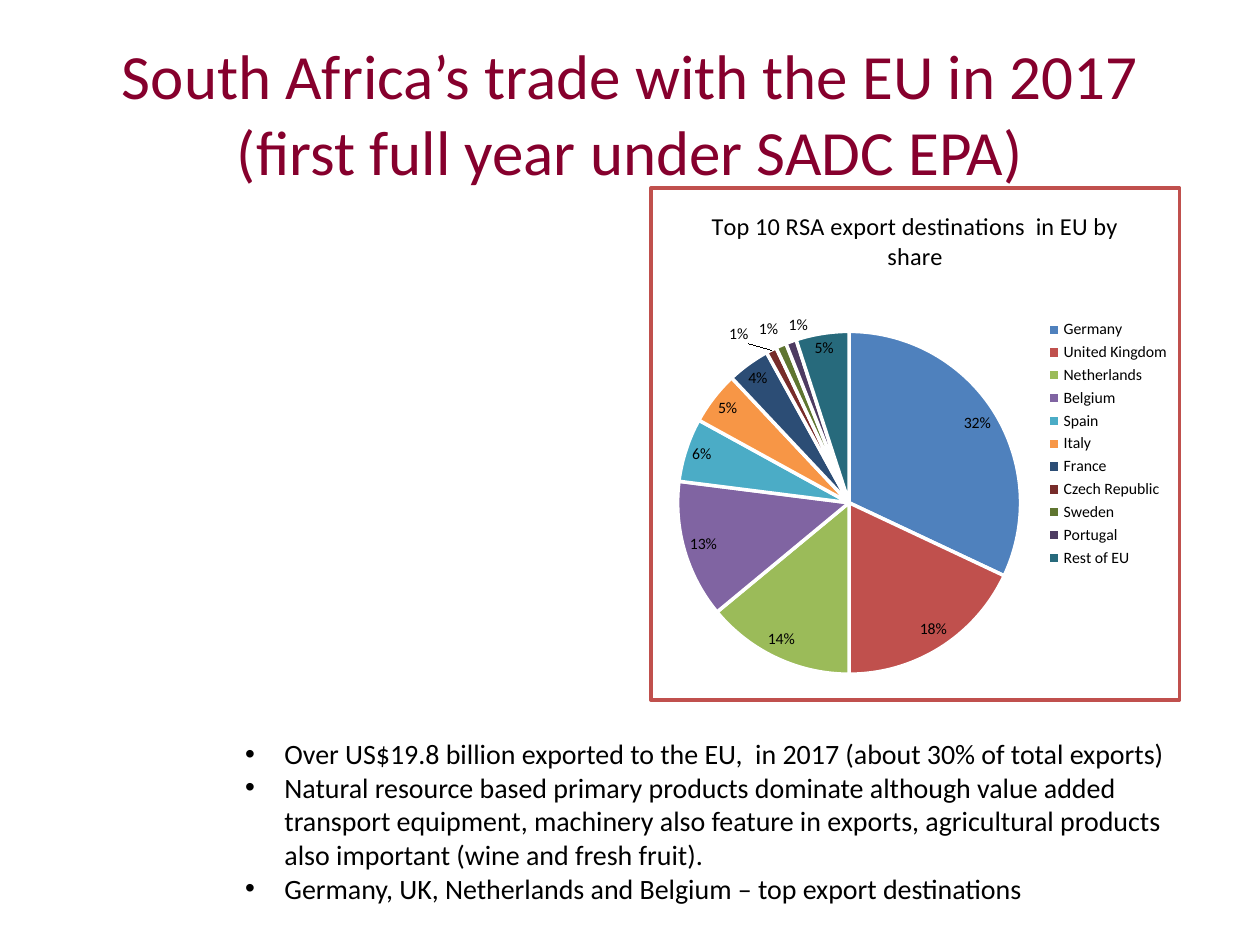
"""Build a slide on South Africa's exports to the EU in 2017."""
from dataclasses import dataclass

from lxml import etree
from pptx import Presentation
from pptx.chart.data import CategoryChartData
from pptx.dml.color import RGBColor
from pptx.enum.chart import XL_CHART_TYPE, XL_LABEL_POSITION, XL_LEGEND_POSITION
from pptx.enum.text import MSO_ANCHOR, PP_ALIGN
from pptx.oxml import parse_xml
from pptx.oxml.ns import nsdecls, qn
from pptx.util import Pt

PIE = XL_CHART_TYPE.PIE
BEST_FIT = XL_LABEL_POSITION.BEST_FIT
LEGEND_RIGHT = XL_LEGEND_POSITION.RIGHT
MIDDLE = MSO_ANCHOR.MIDDLE
CENTER = PP_ALIGN.CENTER
BLANK_LAYOUT = 6

HEADING = "South Africa’s trade with the EU in 2017 (first full year under SADC EPA)"
CHART_TITLE = "Top 10 RSA export destinations  in EU by share"
FINDINGS = (
    "Over US$19.8 billion exported to the EU,  in 2017 (about 30% of total exports)",
    "Natural resource based primary products dominate although value added "
    "transport equipment, machinery also feature in exports, agricultural "
    "products also important (wine and fresh fruit).",
    "Germany, UK, Netherlands and Belgium – top export destinations",
)
EXPORT_SHARES = (
    ("Germany", 32, "4F81BD"),
    ("United Kingdom", 18, "C0504D"),
    ("Netherlands", 14, "9BBB59"),
    ("Belgium", 13, "8064A2"),
    ("Spain", 6, "4BACC6"),
    ("Italy", 5, "F79646"),
    ("France", 4, "2C4D75"),
    ("Czech Republic", 1, "772C2A"),
    ("Sweden", 1, "5F7530"),
    ("Portugal", 1, "4D3B62"),
    ("Rest of EU", 5, "276A7C"),
)


@dataclass(frozen=True)
class Theme:
    """Colours, font and type sizes of the slide."""

    font: str = "Calibri"
    heading: str = "86002D"
    ink: str = "000000"
    paper: str = "FFFFFF"
    border: str = "C0504D"
    heading_size: int = 36
    body_size: int = 16
    chart_title_size: int = 14
    chart_size: int = 10
    label_size: int = 9
    border_width: int = 2


class SlideBuilder:
    """Place styled elements on the current slide."""

    def __init__(self, slide, theme):
        self.slide = slide
        self.theme = theme

    def style(self, font, size, color):
        """Set the typeface, size and colour of a font."""
        font.name = self.theme.font
        font.size = Pt(size)
        font.bold = False
        font.color.rgb = RGBColor.from_string(color)

    def text_frame(self, box):
        """Add a wrapping text box and return its frame."""
        frame = self.slide.shapes.add_textbox(*map(Pt, box)).text_frame
        frame.word_wrap = True
        return frame

    def heading(self, text, box):
        """Add the centred slide heading."""
        frame = self.text_frame(box)
        frame.vertical_anchor = MIDDLE
        paragraph = frame.paragraphs[0]
        paragraph.alignment = CENTER
        run = paragraph.add_run()
        run.text = text
        self.style(run.font, self.theme.heading_size, self.theme.heading)

    def bullets(self, items, box, indent):
        """Add a bulleted list with a hanging indent."""
        frame = self.text_frame(box)
        for index, item in enumerate(items):
            paragraph = frame.add_paragraph() if index else frame.paragraphs[0]
            properties = paragraph._p.get_or_add_pPr()
            properties.set("marL", str(Pt(indent)))
            properties.set("indent", str(-Pt(indent)))
            etree.SubElement(properties, qn("a:buFont")).set("typeface", "Arial")
            etree.SubElement(properties, qn("a:buChar")).set("char", "•")
            run = paragraph.add_run()
            run.text = item
            self.style(run.font, self.theme.body_size, self.theme.ink)

    def layout(self, parent, position, **fractions):
        """Fix a chart part at fractions of the chart area."""
        for stale in parent.findall(qn("c:layout")):
            parent.remove(stale)
        layout = etree.Element(qn("c:layout"))
        manual = etree.SubElement(layout, qn("c:manualLayout"))
        if parent.tag == qn("c:plotArea"):
            etree.SubElement(manual, qn("c:layoutTarget")).set("val", "inner")
        for mode in ("xMode", "yMode"):
            etree.SubElement(manual, qn(f"c:{mode}")).set("val", "edge")
        for side, fraction in fractions.items():
            etree.SubElement(manual, qn(f"c:{side}")).set("val", str(fraction))
        parent.insert(position, layout)

    def frame_chart(self, chart):
        """Fill and outline the chart area."""
        theme = self.theme
        chart._chartSpace.find(qn("c:chart")).addnext(parse_xml(
            f'<c:spPr {nsdecls("c", "a")}>'
            f'<a:solidFill><a:srgbClr val="{theme.paper}"/></a:solidFill>'
            f'<a:ln w="{Pt(theme.border_width)}"><a:solidFill>'
            f'<a:srgbClr val="{theme.border}"/></a:solidFill></a:ln></c:spPr>'))

    def pie(self, title, shares, box):
        """Add a pie chart with percentages and a legend."""
        theme = self.theme
        data = CategoryChartData()
        data.categories = [country for country, _, _ in shares]
        data.add_series("Series 1", [share for _, share, _ in shares])
        chart = self.slide.shapes.add_chart(PIE, *map(Pt, box), data).chart
        self.style(chart.font, theme.chart_size, theme.ink)
        self.frame_chart(chart)

        chart.has_title = True
        run = chart.chart_title.text_frame.paragraphs[0].add_run()
        run.text = title
        self.style(run.font, theme.chart_title_size, theme.ink)

        chart.has_legend = True
        legend = chart.legend
        legend.position = LEGEND_RIGHT
        legend.include_in_layout = False
        self.style(legend.font, theme.label_size, theme.ink)
        self.layout(legend._element, 1, x=0.74, y=0.25, w=0.25, h=0.5)

        plot = chart.plots[0]
        plot.vary_by_categories = True
        self.layout(chart._chartSpace.find(f".//{qn('c:plotArea')}"), 0,
                    x=0.05, y=0.28, w=0.65, h=0.67)
        for index, (_, _, color) in enumerate(shares):
            slice_format = plot.series[0].points[index].format
            slice_format.fill.solid()
            slice_format.fill.fore_color.rgb = RGBColor.from_string(color)
            slice_format.line.color.rgb = RGBColor.from_string(theme.paper)
            slice_format.line.width = Pt(theme.border_width)

        plot.has_data_labels = True
        labels = plot.data_labels
        labels.show_percentage = True
        labels.show_value = False
        labels.number_format = "0%"
        labels.number_format_is_linked = False
        labels.position = BEST_FIT
        self.style(labels.font, theme.label_size, theme.ink)


def main():
    """Build and save the presentation."""
    deck = Presentation()
    deck.slide_width, deck.slide_height = Pt(720), Pt(540)
    slide = deck.slides.add_slide(deck.slide_layouts[BLANK_LAYOUT])
    builder = SlideBuilder(slide, Theme())
    builder.heading(HEADING, (34, 21.5, 652, 85))
    builder.bullets(FINDINGS, (133, 417.5, 540, 143), 22.5)
    builder.pie(CHART_TITLE, EXPORT_SHARES, (371, 106.5, 304, 294.5))
    deck.save("out.pptx")


if __name__ == "__main__":
    main()
